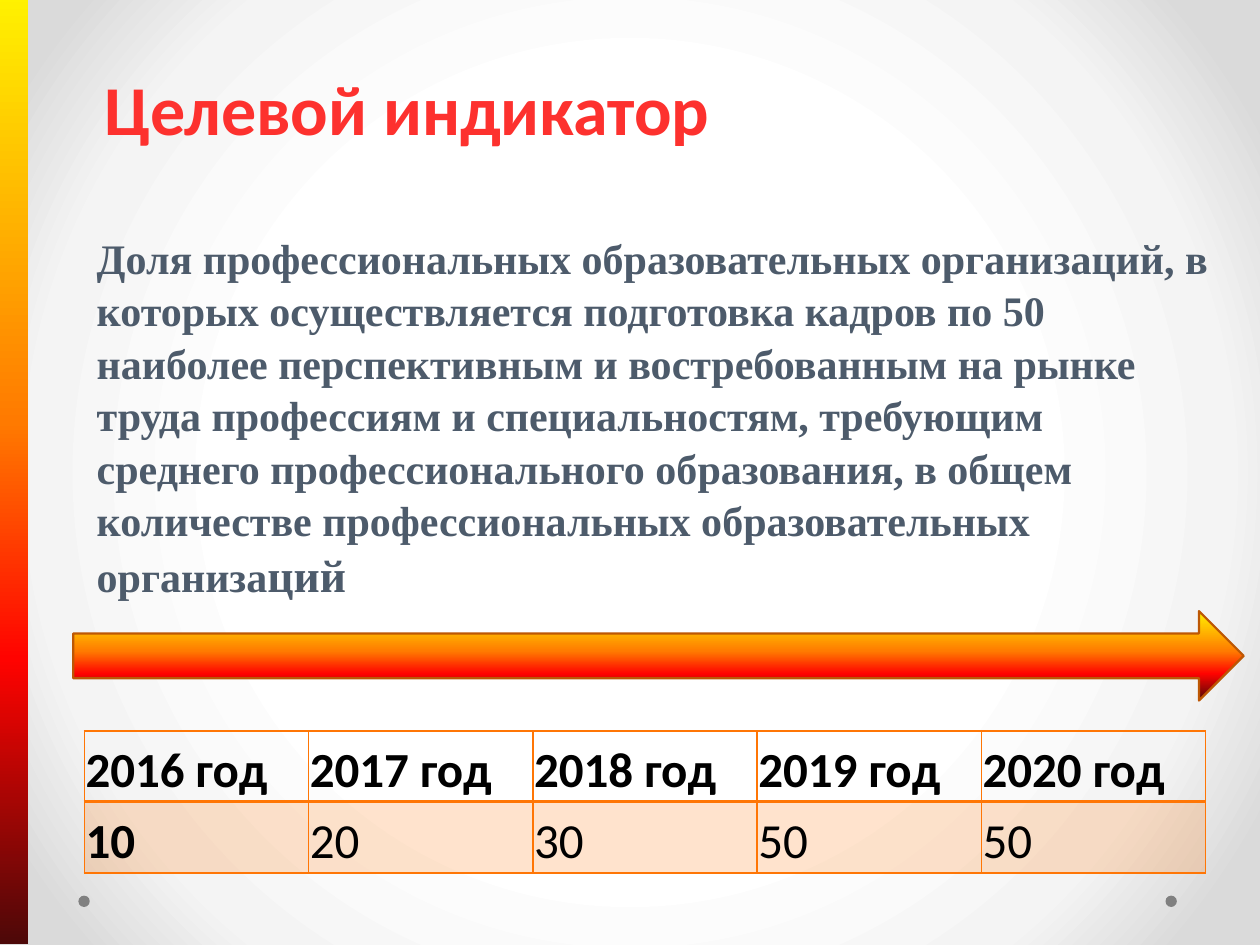
from typing import NamedTuple

from lxml.etree import SubElement
from pptx import Presentation
from pptx.dml.color import RGBColor
from pptx.enum.shapes import MSO_SHAPE
from pptx.oxml.ns import qn
from pptx.util import Pt

COLORS = {
    "title": "FD312E",
    "body": "4D5B6B",
    "accent": "FF7605",
    "arrow_line": "BD5704",
    "dot": "808080",
    "text": "000000",
}
FIRE = [(0, "FFF200"), (45, "FF7A00"), (70, "FF0300"), (100, "4D0808")]
BACKDROP = [(50, "FFFFFF"), (76, "F4F4F4"), (92, "DADADA")]


class Box(NamedTuple):
    left: float
    top: float
    width: float
    height: float


class Run(NamedTuple):
    text: str
    size: float
    font: str
    color: str
    bold: bool = True


class Year(NamedTuple):
    label: str
    value: str
    bold: bool = False


YEARS = [
    Year("2016 год", "10", True),
    Year("2017 год", "20"),
    Year("2018 год", "30"),
    Year("2019 год", "50"),
    Year("2020 год", "50"),
]


def rgb(name: str) -> RGBColor:
    return RGBColor.from_string(COLORS[name])


def set_gradient(fill, parent, stops: list, radial: bool = False) -> None:
    """Fill with the given stops, downwards or out from the centre."""
    fill.gradient()
    grad = parent.find(".//" + qn("a:gradFill"))
    for child in list(grad):
        grad.remove(child)
    gs_list = SubElement(grad, qn("a:gsLst"))
    for position, color in stops:
        gs = SubElement(gs_list, qn("a:gs"), pos=str(position * 1000))
        SubElement(gs, qn("a:srgbClr"), val=color)
    if radial:
        way = SubElement(grad, qn("a:path"), {"path": "circle"})
        SubElement(way, qn("a:fillToRect"), {side: "50000" for side in "ltrb"})
    else:
        SubElement(grad, qn("a:lin"), ang="5400000", scaled="0")


def add_shape(s, kind: MSO_SHAPE, box: Box):
    sp = s.shapes.add_shape(kind, *map(Pt, box))
    sp.shadow.inherit = False
    sp.line.fill.background()
    return sp


def add_run(p, run: Run) -> None:
    r = p.add_run()
    r.text = run.text
    r.font.size = Pt(run.size)
    r.font.name = run.font
    r.font.bold = run.bold
    r.font.color.rgb = rgb(run.color)


def add_text(s, box: Box, runs: list, spacing: float = 1.0):
    tf = s.shapes.add_textbox(*map(Pt, box)).text_frame
    tf.word_wrap = True
    p = tf.paragraphs[0]
    p.line_spacing = spacing
    for run in runs:
        add_run(p, run)
    return tf


def set_borders(cell, widths: dict) -> None:
    tc_pr = cell._tc.get_or_add_tcPr()
    for i, (side, width) in enumerate(widths.items()):
        ln = SubElement(tc_pr, qn(f"a:ln{side}"), w=str(Pt(width)))
        solid = SubElement(ln, qn("a:solidFill"))
        SubElement(solid, qn("a:srgbClr"), val=COLORS["accent"])
        tc_pr.insert(i, ln)


def fill_cell(cell, text: str, bold: bool, header: bool) -> None:
    cell.margin_left = cell.margin_right = Pt(0.7)
    cell.margin_top = cell.margin_bottom = Pt(0.7)
    p = cell.text_frame.paragraphs[0]
    p.line_spacing = 1.15
    add_run(p, Run(text, 28, "Calibri", "text", bold))
    if header:
        cell.fill.background()
    else:
        cell.fill.solid()
        cell.fill.fore_color.rgb = rgb("accent")
        color = cell._tc.tcPr.find(".//" + qn("a:srgbClr"))
        SubElement(color, qn("a:alpha"), val="20000")
    set_borders(cell, {"L": 1, "R": 1, "T": 1 if header else 2, "B": 2 if header else 1})


def add_year_table(s, box: Box) -> None:
    table = s.shapes.add_table(2, len(YEARS), *map(Pt, box)).table
    table.first_row = table.horz_banding = False
    for col, year in enumerate(YEARS):
        table.columns[col].width = Pt(box.width / len(YEARS))
        fill_cell(table.cell(0, col), year.label, True, True)
        fill_cell(table.cell(1, col), year.value, year.bold, False)


def main() -> None:
    prs = Presentation()
    prs.slide_width, prs.slide_height = Pt(720), Pt(540)
    s = prs.slides.add_slide(prs.slide_layouts[6])
    set_gradient(s.background.fill, s._element, BACKDROP, radial=True)

    # Footer dots
    for left in (666, 44.8):
        sp = add_shape(s, MSO_SHAPE.OVAL, Box(left, 511.8, 6.5, 6.5))
        sp.fill.solid()
        sp.fill.fore_color.rgb = rgb("dot")

    # Indicator description
    font = "Times New Roman"
    add_text(s, Box(48.2, 128.2, 652.3, 306), [
        Run("Доля профессиональных образовательных организаций, в которых "
            "осуществляется подготовка кадров по 50 наиболее перспективным и "
            "востребованным на рынке труда профессиям и специальностям, "
            "требующим среднего профессионального образования, в общем "
            "количестве профессиональных образовательных организа", 24, font, "body"),
        Run("ций", 26, font, "body"),
    ], spacing=1.04)

    # Heading
    tf = add_text(s, Box(25.2, 37.3, 646.6, 88),
                  [Run("Целевой индикатор", 40, "Calibri", "title")])
    tf.margin_left, tf.margin_top = Pt(34.6), Pt(0)

    # Target values by year
    add_year_table(s, Box(48.2, 417.6, 640.8, 81.2))

    # Time arrow
    sp = add_shape(s, MSO_SHAPE.RIGHT_ARROW, Box(41.8, 349.2, 668.9, 51.1))
    set_gradient(sp.fill, sp._element.spPr, FIRE)
    sp.line.color.rgb = rgb("arrow_line")
    sp.line.width = Pt(1.25)

    # Left edge bar
    sp = add_shape(s, MSO_SHAPE.RECTANGLE, Box(-3.8, -2.9, 19.8, 542.2))
    set_gradient(sp.fill, sp._element.spPr, FIRE)

    prs.save("out.pptx")


if __name__ == "__main__":
    main()
